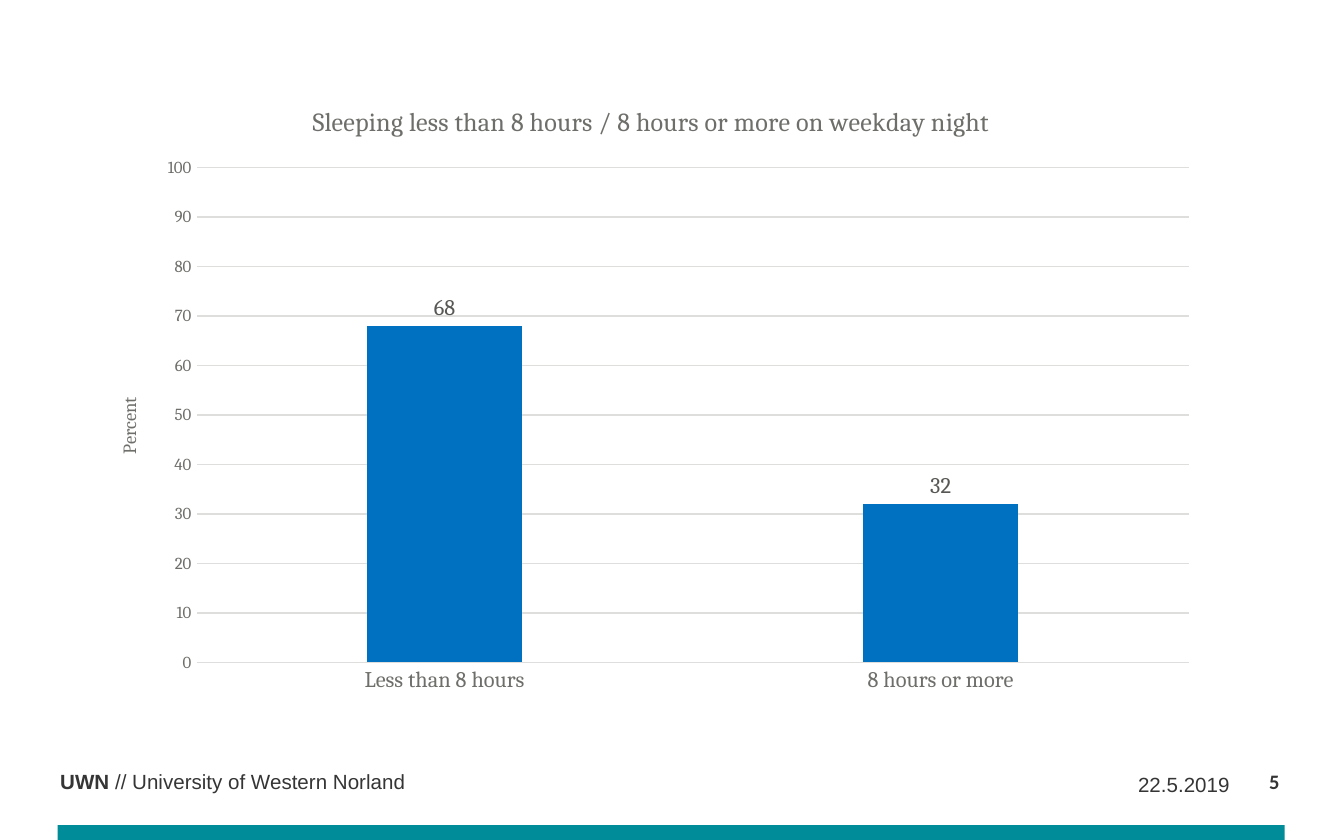
from lxml import etree
from pptx import Presentation
from pptx.chart.data import CategoryChartData
from pptx.dml.color import RGBColor
from pptx.enum.chart import XL_CHART_TYPE as ChartType
from pptx.enum.chart import XL_LABEL_POSITION as LabelPos
from pptx.enum.chart import XL_TICK_MARK as Tick
from pptx.enum.shapes import MSO_SHAPE as Shape
from pptx.enum.text import MSO_ANCHOR as Anchor
from pptx.enum.text import PP_ALIGN as Align
from pptx.oxml.ns import qn
from pptx.util import Inches, Pt

# Content
TITLE = "Sleeping less than 8 hours / 8 hours or more on weekday night"
AXIS_TITLE = "Percent"
SHARES = {"Less than 8 hours": 68, "8 hours or more": 32}
FOOTER = [("UWN", True), (" // University of Western Norland", False)]
DATE = [("22.5.2019", False)]
PAGE = [("5", True)]

# Colours
INK, GREY, LABEL, GRID = "353535", "6E6E6A", "575754", "DEDEDC"
BAR, TEAL = "0070C0", "008C99"


def rgb(value):
    return RGBColor.from_string(value)


def style(font, size, color, name="Cambria", bold=False):
    font.size, font.name, font.bold = Pt(size), name, bold
    font.color.rgb = rgb(color)


def add_text(s, box, runs, name="Arial", align=Align.LEFT,
             anchor=Anchor.TOP, insets=(0, 0, 0, 0)):
    tf = s.shapes.add_textbox(*map(Inches, box)).text_frame
    tf.word_wrap, tf.vertical_anchor = True, anchor
    (tf.margin_left, tf.margin_top,
     tf.margin_right, tf.margin_bottom) = map(Inches, insets)
    p = tf.paragraphs[0]
    p.alignment = align
    for text, bold in runs:
        r = p.add_run()
        r.text = text
        style(r.font, 11, INK, name, bold)


def set_layout(parent, index, **places):
    """Fix a chart part at fractions of the chart's size."""
    for old in parent.findall(qn("c:layout")):
        parent.remove(old)
    layout = etree.Element(qn("c:layout"))
    manual = etree.SubElement(layout, qn("c:manualLayout"))
    if "w" in places:
        etree.SubElement(manual, qn("c:layoutTarget")).set("val", "inner")
    for key in ("x", "y"):
        etree.SubElement(manual, qn(f"c:{key}Mode")).set("val", "edge")
    for key, value in places.items():
        etree.SubElement(manual, qn(f"c:{key}")).set("val", str(value))
    parent.insert(index, layout)


def add_title(owner, text, size, x, y):
    p = owner.text_frame.paragraphs[0]
    r = p.add_run()
    r.text = text
    style(r.font, size, GREY)
    set_layout(owner._element, 1, x=x, y=y)


def add_share_chart(s):
    data = CategoryChartData(number_format="#,##0")
    data.categories = list(SHARES)
    data.add_series("Series 1", list(SHARES.values()))
    box = map(Inches, (0.67, 0.61, 8.35, 4.65))
    chart = s.shapes.add_chart(ChartType.COLUMN_CLUSTERED, *box, data).chart
    style(chart.font, 10, "1D1D1C")
    chart.has_legend = False
    chart.has_title = True
    add_title(chart.chart_title, TITLE, 14, 0.194, 0.029)

    # Axes
    cat, val = chart.category_axis, chart.value_axis
    for axis, size in ((cat, 12), (val, 9)):
        axis.major_tick_mark = axis.minor_tick_mark = Tick.NONE
        style(axis.tick_labels.font, size, GREY)
    val.minimum_scale, val.maximum_scale, val.major_unit = 0, 100, 10
    val.format.line.fill.background()
    for line in (cat.format.line, val.major_gridlines.format.line):
        line.color.rgb, line.width = rgb(GRID), Pt(0.75)
    val.has_title = True
    add_title(val.axis_title, AXIS_TITLE, 10, 0.021, 0.5)

    # Columns and their labels
    plot = chart.plots[0]
    plot.gap_width, plot.overlap, plot.vary_by_categories = 219, -27, False
    fill = plot.series[0].format.fill
    fill.solid()
    fill.fore_color.rgb = rgb(BAR)
    labels = plot.series[0].data_labels
    labels.show_value, labels.position = True, LabelPos.OUTSIDE_END
    labels.number_format, labels.number_format_is_linked = "#,##0", False
    style(labels.font, 12, LABEL)
    area = chart._chartSpace.find(".//" + qn("c:plotArea"))
    set_layout(area, 0, x=0.095, y=0.137, w=0.884, h=0.792)


def main():
    prs = Presentation()
    prs.slide_width, prs.slide_height = Inches(10), Inches(6.25)
    s = prs.slides.add_slide(prs.slide_layouts[6])

    # Footer
    add_text(s, (0.35, 5.67, 3.86, 0.29), FOOTER,
             insets=(0.1, 0.05, 0.1, 0.05))
    bar = s.shapes.add_shape(Shape.RECTANGLE,
                             *map(Inches, (0.43, 6.14, 9.13, 0.13)))
    bar.shadow.inherit = False
    bar.fill.solid()
    bar.fill.fore_color.rgb = rgb(TEAL)
    bar.line.fill.background()
    add_text(s, (8.19, 5.72, 0.96, 0.23), DATE, align=Align.RIGHT,
             anchor=Anchor.MIDDLE)
    add_text(s, (9.13, 5.7, 0.39, 0.23), PAGE, name="Calibri",
             align=Align.RIGHT, insets=(0, 0.02, 0, 0))

    # Chart
    add_share_chart(s)
    prs.save("out.pptx")


if __name__ == "__main__":
    main()
